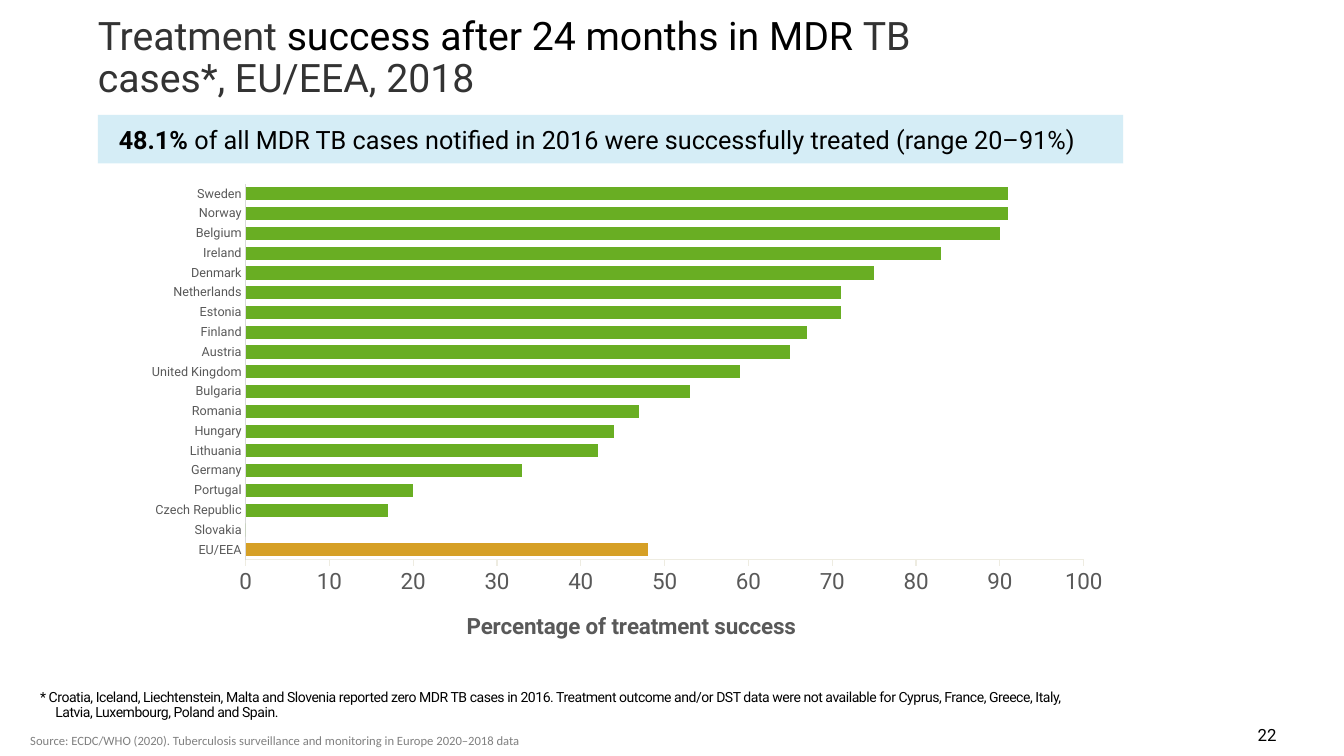
"""Build the slide on treatment success in MDR TB cases, EU/EEA, 2018."""
from lxml.etree import SubElement
from pptx import Presentation
from pptx.chart.data import CategoryChartData
from pptx.dml.color import RGBColor
from pptx.enum.chart import XL_CHART_TYPE, XL_TICK_MARK
from pptx.enum.shapes import MSO_SHAPE
from pptx.enum.text import MSO_ANCHOR, MSO_AUTO_SIZE, PP_ALIGN
from pptx.oxml import parse_xml
from pptx.oxml.ns import nsdecls, qn
from pptx.util import Pt

PX = 9144
BLACK = RGBColor(0x00, 0x00, 0x00)
DARK = RGBColor(0x33, 0x33, 0x33)
GREY = RGBColor(0x80, 0x80, 0x80)
AXIS_TEXT = RGBColor(0x59, 0x59, 0x59)
CAT_LINE = RGBColor(0xD9, 0xD9, 0xD9)
VAL_LINE = RGBColor(0xEE, 0xEC, 0xE1)
PALE_BLUE = RGBColor(0xAC, 0xDD, 0xEF)
GREEN = RGBColor(0x69, 0xAE, 0x23)
AMBER = RGBColor(0xD6, 0xA0, 0x26)


def place(s, x, y, w, h, inset=(0, 0), anchor=MSO_ANCHOR.TOP):
    s.left, s.top, s.width, s.height = x * PX, y * PX, w * PX, h * PX
    tf = s.text_frame
    tf.word_wrap = True
    tf.auto_size = MSO_AUTO_SIZE.NONE
    tf.vertical_anchor = anchor
    tf.margin_left = tf.margin_right = inset[0] * PX
    tf.margin_top = tf.margin_bottom = inset[1] * PX
    return tf.paragraphs[0]


def write(p, text, size, color=BLACK, font="Roboto", bold=False, spacing=None):
    r = p.add_run()
    r.text = text
    r.font.size, r.font.name, r.font.bold = Pt(size), font, bold
    r.font.color.rgb = color
    if spacing:
        r.font._element.set("spc", str(spacing))


prs = Presentation()
prs.slide_width, prs.slide_height = 1333 * PX, 750 * PX
slide = prs.slides.add_slide(prs.slide_layouts[5])
shapes = slide.shapes

p = place(shapes.title, 97, 16, 858, 90)
p.alignment = PP_ALIGN.LEFT
p.line_spacing = 0.9
write(p, "Treatment ", 28, DARK)
write(p, "success after 24 months in MDR ", 28)
write(p, "TB cases*, EU/EEA, 2018", 28, DARK)

p = place(shapes.add_textbox(0, 0, 0, 0), 996, 709, 280, 40, (10, 4), MSO_ANCHOR.MIDDLE)
p.alignment = PP_ALIGN.RIGHT
write(p, "22", 12)

banner = shapes.add_shape(MSO_SHAPE.SNIP_2_DIAG_RECTANGLE, 0, 0, 0, 0)
banner.adjustments[0] = banner.adjustments[1] = 0
banner.shadow.inherit = False
banner.fill.solid()
banner.fill.fore_color.rgb = PALE_BLUE
SubElement(banner._element.spPr.find(".//" + qn("a:srgbClr")), qn("a:alpha"), val="50000")
banner.line.fill.background()
p = place(banner, 97, 114, 1017, 48, (10, 5), MSO_ANCHOR.MIDDLE)
p.alignment = PP_ALIGN.LEFT
p._p.get_or_add_pPr().set("marL", str(11 * PX))
write(p, "48.1% ", 18, bold=True)
write(p, "of all MDR TB cases notified in 2016 were successfully treated (range 20–91%)", 18)

p = place(shapes.add_textbox(0, 0, 0, 0), 30, 729, 569, 21)
p.line_spacing = 0.9
write(p, "Source: ECDC/WHO (2020). Tuberculosis surveillance and monitoring in Europe 2020–2018 data",
      9, GREY, "Calibri")

p = place(shapes.add_textbox(0, 0, 0, 0), 30, 680, 1069, 40, (10, 5))
p.line_spacing = 0.9
pPr = p._p.get_or_add_pPr()
pPr.set("marL", str(15 * PX))
pPr.set("indent", str(-15 * PX))
write(p, "* Croatia, Iceland, Liechtenstein, Malta and Slovenia reported zero MDR TB cases in 2016. "
      "Treatment outcome and/or DST data were not available for Cyprus, France, Greece, Italy, "
      "Latvia, Luxembourg, Poland and Spain.", 10, spacing=-30)

success = {
    "EU/EEA": 48, "Slovakia": 0, "Czech Republic": 17, "Portugal": 20, "Germany": 33,
    "Lithuania": 42, "Hungary": 44, "Romania": 47, "Bulgaria": 53, "United Kingdom": 59,
    "Austria": 65, "Finland": 67, "Estonia": 71, "Netherlands": 71, "Denmark": 75,
    "Ireland": 83, "Belgium": 90, "Norway": 91, "Sweden": 91,
}
data = CategoryChartData(number_format="0")
data.categories = list(success)
data.add_series("Series 1", list(success.values()))
chart = shapes.add_chart(XL_CHART_TYPE.BAR_CLUSTERED, 136 * PX, 173 * PX,
                         978 * PX, 478 * PX, data).chart
chart.has_legend = chart.has_title = False
chart.font.name, chart.font.size = "Roboto", Pt(10)
chart.font.color.rgb = BLACK

plot = chart.plots[0]
plot.gap_width, plot.overlap, plot.vary_by_categories = 50, 70, False
series = plot.series[0]
for bar, color in ((series, GREEN), (series.points[0], AMBER)):
    bar.format.fill.solid()
    bar.format.fill.fore_color.rgb = color

for axis, size, line, tick in (
    (chart.category_axis, 9, CAT_LINE, XL_TICK_MARK.NONE),
    (chart.value_axis, 16, VAL_LINE, XL_TICK_MARK.OUTSIDE),
):
    axis.has_major_gridlines = False
    axis.major_tick_mark, axis.minor_tick_mark = tick, XL_TICK_MARK.NONE
    axis.format.line.color.rgb, axis.format.line.width = line, Pt(0.75)
    font = axis.tick_labels.font
    font.name, font.size, font.color.rgb = "Roboto", Pt(size), AXIS_TEXT

axis = chart.value_axis
axis.minimum_scale, axis.maximum_scale, axis.major_unit = 0, 100, 10
axis.tick_labels.number_format = "0"
axis.tick_labels.number_format_is_linked = False
write(axis.axis_title.text_frame.paragraphs[0], "Percentage of treatment success",
      16, AXIS_TEXT, bold=True)

layouts = (
    (chart._chartSpace.chart.plotArea, 0,
     '<c:layoutTarget val="inner"/><c:xMode val="edge"/><c:yMode val="edge"/>'
     '<c:x val="0.11"/><c:y val="0.02"/><c:w val="0.85"/><c:h val="0.78"/>'),
    (axis.axis_title._element, 1,
     '<c:xMode val="edge"/><c:yMode val="edge"/><c:x val="0.33"/><c:y val="0.9"/>'),
)
for parent, index, settings in layouts:
    for old in parent.findall(qn("c:layout")):
        parent.remove(old)
    parent.insert(index, parse_xml(
        f'<c:layout {nsdecls("c")}><c:manualLayout>{settings}</c:manualLayout></c:layout>'))

prs.save("out.pptx")
